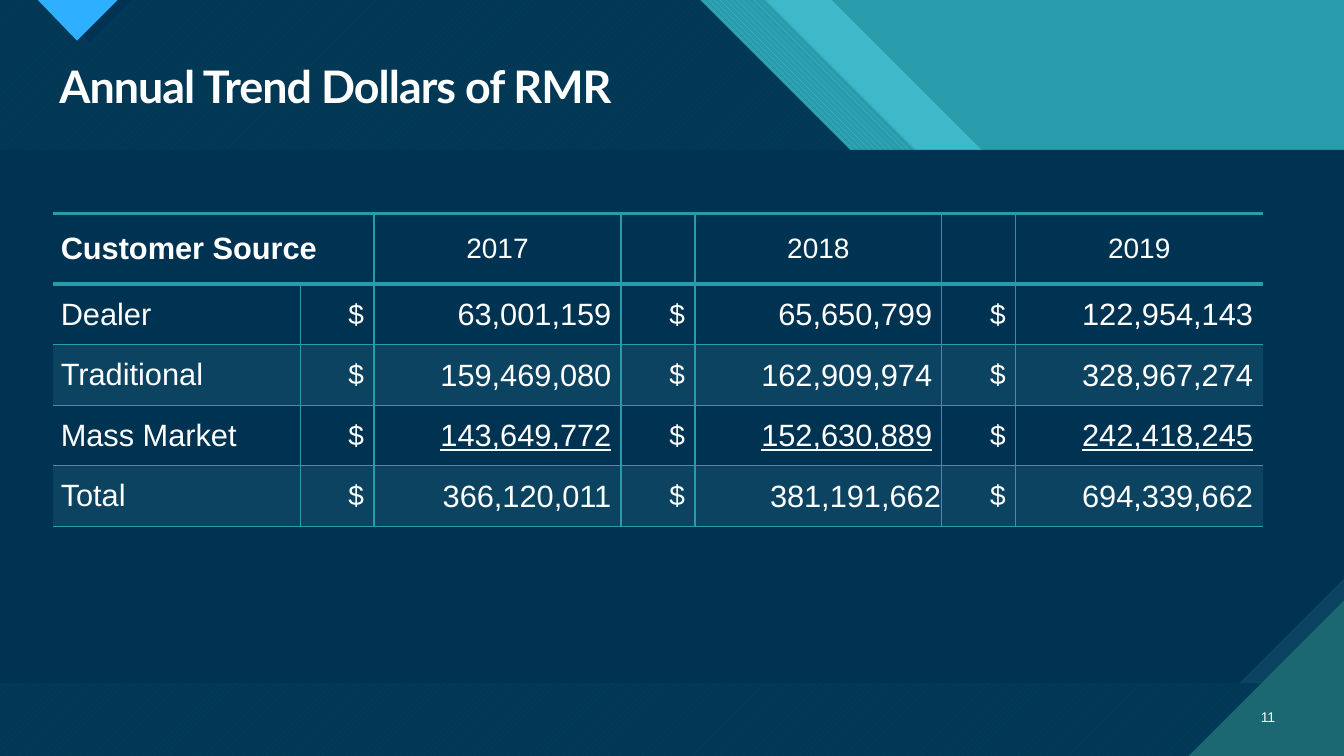
from lxml import etree
from pptx import Presentation
from pptx.dml.color import RGBColor
from pptx.enum import dml, shapes, text
from pptx.oxml import ns
from pptx.util import Pt

NAVY = RGBColor(0x00, 0x33, 0x52)
BLUE = RGBColor(0x0C, 0x43, 0x60)
DARK = RGBColor(0x03, 0x38, 0x55)
DUSK = RGBColor(0x07, 0x41, 0x5F)
TEAL = RGBColor(0x29, 0x9C, 0xAB)
AQUA = RGBColor(0x3F, 0xB9, 0xC9)
CYAN = RGBColor(0x47, 0xC3, 0xD3)
PINE = RGBColor(0x1B, 0x68, 0x72)
SKY = RGBColor(0x2F, 0xAF, 0xFF)
WHITE = RGBColor(0xFF, 0xFF, 0xFF)

TITLE = "Annual Trend Dollars of RMR"
PAGE = "11"
HEAD = ["Customer Source", "", "2017", "", "2018", "", "2019"]
SALES = [
    ("Dealer", "63,001,159", "65,650,799", "122,954,143"),
    ("Traditional", "159,469,080", "162,909,974", "328,967,274"),
    ("Mass Market", "143,649,772", "152,630,889", "242,418,245"),
    ("Total", "366,120,011", "381,191,662", "694,339,662"),
]
UNDER = "Mass Market"
TIGHT = (4, 4)  # the one sum set flush with its right border

WIDE, HIGH = 960, 540
TOP, LOW = 106.6, 488.2  # edges of the body panel
SNIP, NOOK = 75, 111
BANDS = [(594, AQUA, None), (547.2, TEAL, CYAN), (500.4, DARK, DUSK)]
COLS = [176.4, 52.8, 176.4, 52.8, 176.4, 52.8, 176.4]
ROWS = [50.4] + [43.2] * 4
LEFT, MID, RIGHT = text.PP_ALIGN.LEFT, text.PP_ALIGN.CENTER, text.PP_ALIGN.RIGHT
STRIPE = {TEAL: dml.MSO_PATTERN.WIDE_DOWNWARD_DIAGONAL,
          DARK: dml.MSO_PATTERN.WIDE_UPWARD_DIAGONAL}


def style(item, props):
    for name, value in props.items():
        setattr(item, name, value)


def paint(shape, back, fore=None):
    """Fill with one colour, or with diagonal stripes when fore is given."""
    if fore is None:
        shape.fill.solid()
        shape.fill.fore_color.rgb = back
    else:
        shape.fill.patterned()
        shape.fill.pattern = STRIPE[back]
        shape.fill.fore_color.rgb = fore
        shape.fill.back_color.rgb = back
    shape.line.fill.background()
    shape.shadow.inherit = False


def draw(slide, points, back, fore=None):
    pen = slide.shapes.build_freeform(*points[0], scale=float(Pt(1)))
    pen.add_line_segments(points[1:], close=True)
    paint(pen.convert_to_shape(), back, fore)


def write(frame, words, align, size, face="Arial", **extra):
    para = frame.paragraphs[0]
    para.alignment = align
    run = para.add_run()
    run.text = words
    style(run.font, dict(size=Pt(size), name=face, **extra))
    run.font.color.rgb = WHITE
    return para, run


def edge(cell, side, width):
    line = etree.SubElement(cell._tc.get_or_add_tcPr(), ns.qn("a:ln" + side))
    line.set("w", str(Pt(width)))
    if width:
        fill = etree.SubElement(line, ns.qn("a:solidFill"))
        etree.SubElement(fill, ns.qn("a:srgbClr")).set("val", str(TEAL))
    else:
        etree.SubElement(line, ns.qn("a:noFill"))


def scene(slide):
    slide.background.fill.solid()
    slide.background.fill.fore_color.rgb = TEAL
    for x, back, fore in BANDS:
        draw(slide, [(0, 0), (x, 0), (x + 214, 214), (WIDE, 214),
                     (WIDE, HIGH), (0, HIGH)], back, fore)
    for x, half, color in [(64.4, 29.8, NAVY), (55.4, 28.8, SKY)]:
        draw(slide, [(x - half, 0), (x + half, 0), (x, half)], color)
    draw(slide, [(0, TOP), (WIDE, TOP), (WIDE, LOW), (0, LOW)], BLUE)
    draw(slide, [(0, TOP), (WIDE, TOP), (WIDE, LOW - SNIP),
                 (WIDE - SNIP, LOW), (0, LOW)], NAVY)
    draw(slide, [(WIDE - NOOK, HIGH), (WIDE, HIGH), (WIDE, HIGH - NOOK)], PINE)


def fill_cell(cell, row, col, words):
    last = len(COLS) - 1
    edge(cell, "L", 1 if col else 0)
    edge(cell, "R", 1 if col < last else 0)
    edge(cell, "T", 3 if row < 2 else 1)
    edge(cell, "B", 1 if row else 3)
    if row and row % 2 == 0:
        cell.fill.solid()
        cell.fill.fore_color.rgb = BLUE
    else:
        cell.fill.background()
    cell.vertical_anchor = text.MSO_ANCHOR.MIDDLE
    if not words:
        return
    if col == 0:
        style(cell, dict(margin_left=Pt(5.4), margin_right=Pt(5.4)))
        write(cell.text_frame, words, LEFT, 22, bold=row == 0)
    elif row == 0:
        write(cell.text_frame, words, MID, 20, bold=False)
    elif words == "$":
        write(cell.text_frame, words, RIGHT, 20)
    else:
        gap = 0.7 if (row, col) == TIGHT else 6.9
        style(cell, dict(margin_left=Pt(0.7), margin_right=Pt(gap),
                         margin_top=Pt(0.7), margin_bottom=0))
        write(cell.text_frame, words, RIGHT, 22,
              underline=SALES[row - 1][0] == UNDER)


def trend(slide):
    grid = [HEAD]
    for source, *sums in SALES:
        grid.append([source] + [part for total in sums for part in ("$", total)])
    table = slide.shapes.add_table(len(ROWS), len(COLS), Pt(38), Pt(152.6),
                                   Pt(sum(COLS)), Pt(sum(ROWS))).table
    style(table, dict(first_row=False, horz_banding=False))
    for col, width in zip(table.columns, COLS):
        col.width = Pt(width)
    for row, height in zip(table.rows, ROWS):
        row.height = Pt(height)
    for r, line in enumerate(grid):
        for c, words in enumerate(line):
            fill_cell(table.cell(r, c), r, c, words)
    table.cell(0, 0).merge(table.cell(0, 1))


def main():
    deck = Presentation()
    style(deck, dict(slide_width=Pt(WIDE), slide_height=Pt(HIGH)))
    slide = deck.slides.add_slide(deck.slide_layouts[5])
    scene(slide)

    title = slide.shapes.title
    style(title, dict(left=Pt(35.3), top=Pt(42.5), width=Pt(882.7), height=Pt(42.5)))
    style(title.text_frame, dict(margin_top=0, margin_bottom=0, word_wrap=True,
                                 auto_size=text.MSO_AUTO_SIZE.NONE,
                                 vertical_anchor=text.MSO_ANCHOR.MIDDLE))
    para, run = write(title.text_frame, TITLE, LEFT, 32, "Lato", bold=True)
    para.line_spacing = 0.9
    run.font._element.set("spc", "-70")
    tree = slide.shapes._spTree
    tree.append(title._element)

    trend(slide)
    page = slide.shapes.add_textbox(Pt(886.3), Pt(497.5), Pt(31.7), Pt(28.8))
    style(page.text_frame, dict(word_wrap=True,
                                vertical_anchor=text.MSO_ANCHOR.MIDDLE))
    write(page.text_frame, PAGE, RIGHT, 10)
    deck.save("out.pptx")


if __name__ == "__main__":
    main()
